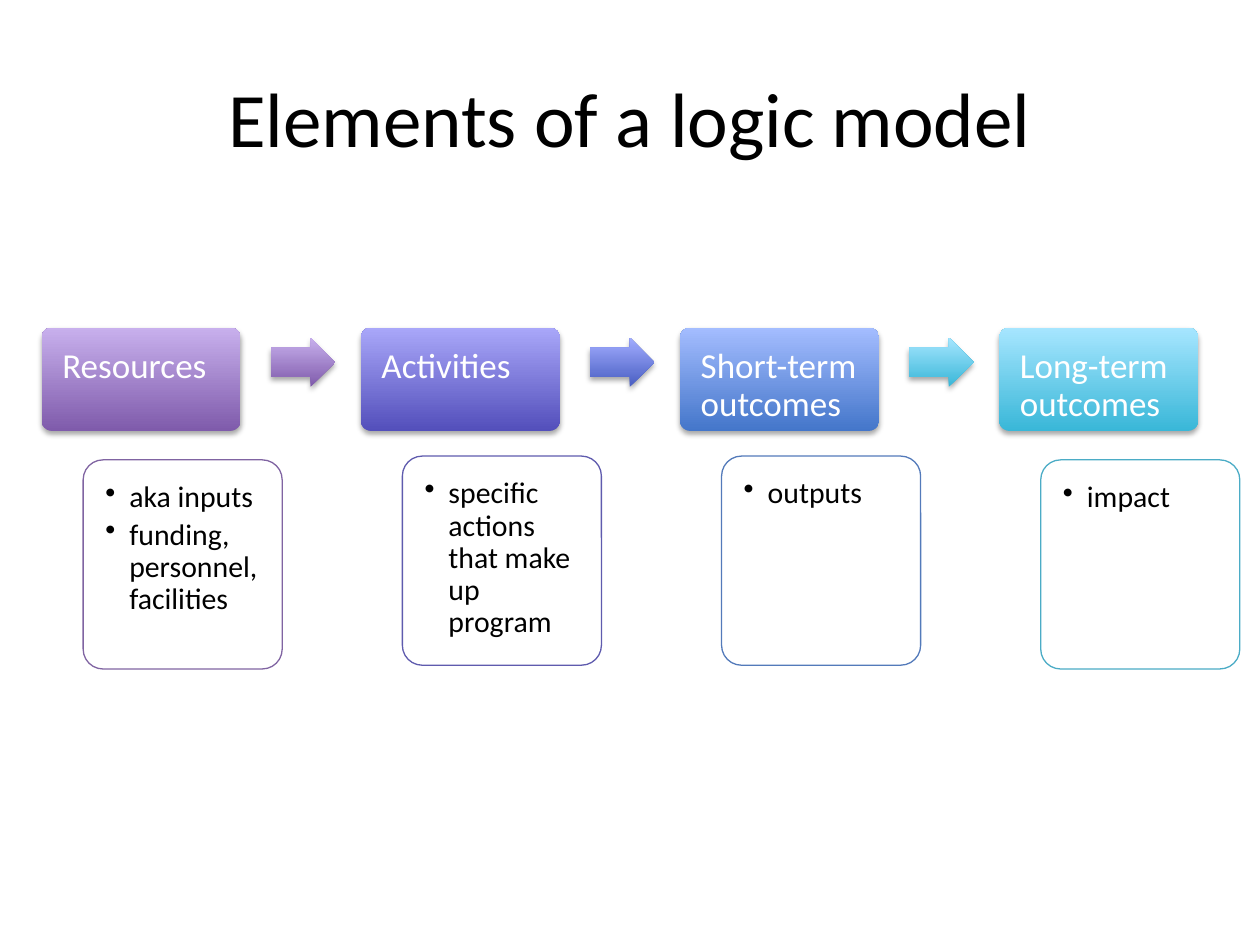
import pptx
import pptx.dml.color
import pptx.enum.shapes
import pptx.enum.text
import pptx.oxml.ns
import pptx.util
from lxml import etree

Inches = pptx.util.Inches
Pt = pptx.util.Pt
RGBColor = pptx.dml.color.RGBColor
Preset = pptx.enum.shapes.MSO_SHAPE
Anchor = pptx.enum.text.MSO_ANCHOR
Align = pptx.enum.text.PP_ALIGN
qn = pptx.oxml.ns.qn

FONT = "Calibri"
BLACK = RGBColor(0x00, 0x00, 0x00)
WHITE = RGBColor(0xFF, 0xFF, 0xFF)
PURPLE = RGBColor(0x7F, 0x5B, 0xAB)
LILAC = RGBColor(0xC8, 0xB0, 0xED)
PURPLE_LINE = RGBColor(0x80, 0x64, 0xA2)
INDIGO = RGBColor(0x53, 0x4F, 0xBB)
LAVENDER = RGBColor(0xA9, 0xA7, 0xF9)
INDIGO_LINE = RGBColor(0x5F, 0x5B, 0xAE)
COBALT = RGBColor(0x49, 0x5E, 0xC2)
PERIWINKLE = RGBColor(0xA2, 0xAD, 0xFF)
BLUE = RGBColor(0x44, 0x76, 0xCA)
SKY = RGBColor(0xA4, 0xBD, 0xFF)
BLUE_LINE = RGBColor(0x53, 0x7A, 0xBA)
CYAN = RGBColor(0x39, 0xB7, 0xD8)
ICE = RGBColor(0xA7, 0xE6, 0xFF)
CYAN_LINE = RGBColor(0x4B, 0xAC, 0xC6)

TITLE = "Elements of a logic model"
STAGES = [
    ("Resources", ["aka inputs", "funding, personnel, facilities"],
     (PURPLE, LILAC), PURPLE_LINE, 3.65),
    ("Activities", ["specific actions that make up program"],
     (INDIGO, LAVENDER), INDIGO_LINE, 3.62),
    ("Short-term outcomes", ["outputs"], (BLUE, SKY), BLUE_LINE, 3.62),
    ("Long-term outcomes", ["impact"], (CYAN, ICE), CYAN_LINE, 3.65),
]
ARROWS = [(PURPLE, LILAC), (COBALT, PERIWINKLE), (CYAN, ICE)]

FIRST_LEFT, LAST_LEFT = 0.33, 7.93
STEP = (LAST_LEFT - FIRST_LEFT) / (len(STAGES) - 1)
STAGE_WIDTH = 1.58
HEADING_TOP, HEADING_HEIGHT = 2.6, 0.82
DETAIL_OFFSET, DETAIL_HEIGHT = 0.33, 1.66
ARROW_OFFSET, ARROW_TOP = 1.82, 2.68
ARROW_WIDTH, ARROW_HEIGHT = 0.51, 0.39


def add_shape(slide, preset, box, adjustments):
    shape = slide.shapes.add_shape(preset, *map(Inches, box))
    for index, value in enumerate(adjustments):
        shape.adjustments[index] = value
    shape.shadow.inherit = False
    return shape


def add_glossy_shape(slide, preset, box, adjustments, colors):
    shape = add_shape(slide, preset, box, adjustments)
    shape.line.fill.background()
    shape.fill.gradient()
    shape.fill.gradient_angle = 90
    for stop, color in zip(shape.fill.gradient_stops, colors):
        stop.color.rgb = color
    effects = shape.element.spPr.find(qn("a:effectLst"))
    shadow = etree.SubElement(
        effects, qn("a:outerShdw"), blurRad=str(Pt(3.1)), dist=str(Pt(1.8)),
        dir="5400000", rotWithShape="0")
    shadow_color = etree.SubElement(shadow, qn("a:srgbClr"), val=str(BLACK))
    etree.SubElement(shadow_color, qn("a:alpha"), val="35000")
    return shape


def write(shape, lines, size, color, space_after, margins, bulleted=False):
    frame = shape.text_frame
    frame.word_wrap = True
    frame.vertical_anchor = Anchor.TOP
    (frame.margin_left, frame.margin_top,
     frame.margin_right, frame.margin_bottom) = map(Inches, margins)
    frame.text = "\n".join(lines)
    for paragraph in frame.paragraphs:
        paragraph.alignment = Align.LEFT
        paragraph.line_spacing = 0.9
        paragraph.space_after = Pt(space_after)
        if bulleted:
            properties = paragraph._p.get_or_add_pPr()
            properties.set("marL", str(Inches(0.19)))
            properties.set("indent", str(Inches(-0.19)))
            etree.SubElement(properties, qn("a:buChar"), char="•")
        paragraph.font.name = FONT
        paragraph.font.size = Pt(size)
        paragraph.font.color.rgb = color


def add_stage(slide, left, heading, details, colors, outline, detail_top):
    heading_box = add_glossy_shape(
        slide, Preset.ROUNDED_RECTANGLE,
        (left, HEADING_TOP, STAGE_WIDTH, HEADING_HEIGHT), [0.1], colors)
    write(heading_box, [heading], 20, WHITE, 7, (0.14, 0.14, 0.14, 0))

    detail_box = add_shape(
        slide, Preset.ROUNDED_RECTANGLE,
        (left + DETAIL_OFFSET, detail_top, STAGE_WIDTH, DETAIL_HEIGHT), [0.1])
    detail_box.fill.solid()
    detail_box.fill.fore_color.rgb = WHITE
    fill_color = detail_box.element.spPr.find(qn("a:solidFill"))[0]
    etree.SubElement(fill_color, qn("a:alpha"), val="90000")
    detail_box.line.color.rgb = outline
    detail_box.line.width = Pt(0.75)
    write(detail_box, details, 17, BLACK, 3, [0.13] * 4, bulleted=True)


def main():
    presentation = pptx.Presentation()
    presentation.slide_width = Inches(10)
    presentation.slide_height = Inches(7.5)
    slide = presentation.slides.add_slide(presentation.slide_layouts[5])

    title = slide.shapes.title
    title.left, title.top, title.width, title.height = map(
        Inches, (0.5, 0.3, 9, 1.25))
    title.text_frame.text = TITLE
    title.text_frame.vertical_anchor = Anchor.MIDDLE
    title_line = title.text_frame.paragraphs[0]
    title_line.alignment = Align.CENTER
    title_line.font.name = FONT
    title_line.font.size = Pt(44)
    title_line.font.color.rgb = BLACK

    for column, stage in enumerate(STAGES):
        add_stage(slide, FIRST_LEFT + column * STEP, *stage)
    for column, colors in enumerate(ARROWS):
        arrow_left = FIRST_LEFT + column * STEP + ARROW_OFFSET
        add_glossy_shape(
            slide, Preset.RIGHT_ARROW,
            (arrow_left, ARROW_TOP, ARROW_WIDTH, ARROW_HEIGHT),
            [0.6, 0.5], colors)

    presentation.save("out.pptx")


if __name__ == "__main__":
    main()
